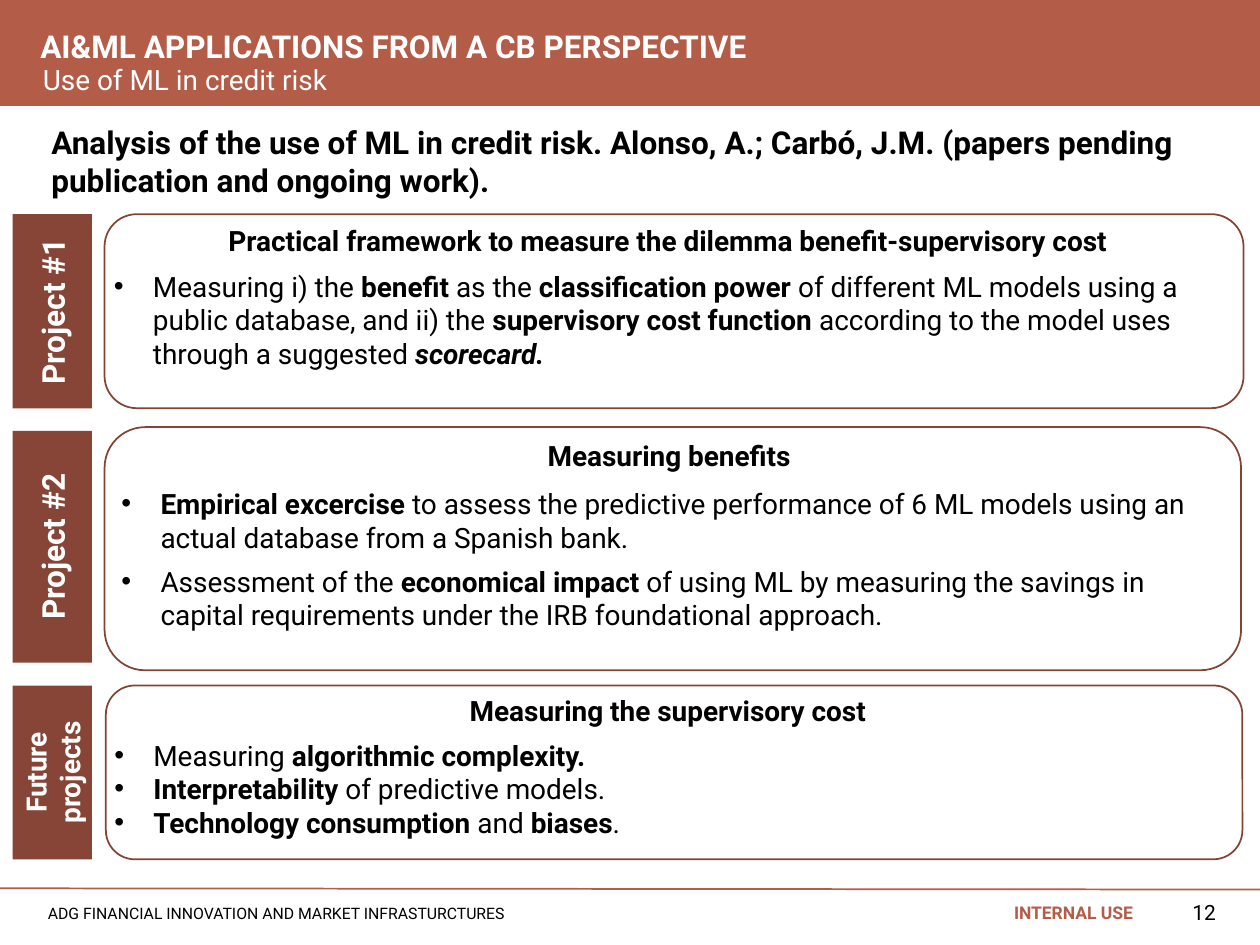
from pptx import Presentation
from pptx.dml.color import RGBColor
from pptx.enum.shapes import MSO_CONNECTOR as Conn, MSO_SHAPE as Shape
from pptx.enum.text import MSO_ANCHOR as Anchor, MSO_AUTO_SIZE as Fit, PP_ALIGN as Align
from pptx.oxml.ns import qn
from pptx.util import Inches, Pt
from lxml import etree

FONT = "Roboto"
BRICK, RUST, EDGE = "B35C48", "864536", "844435"
WHITE, BLACK = "FFFFFF", "000000"


def color(code):
    return RGBColor.from_string(code)


def write(frame, text, size=16, tint=BLACK, bold=False, align=Align.LEFT,
          before=0, line=None, bullet=False, first=True):
    """Add a paragraph; *stars* mark bold, *~tilde* marks bold italic."""
    para = frame.paragraphs[0] if first else frame.add_paragraph()
    props = para._p.get_or_add_pPr()
    hang = Inches(0.31) if bullet else 0
    props.set("marL", str(hang))
    props.set("indent", str(-hang))
    if bullet:
        etree.SubElement(props, qn("a:buFont")).set("typeface", "Arial")
        etree.SubElement(props, qn("a:buChar")).set("char", "•")
    else:
        etree.SubElement(props, qn("a:buNone"))
    para.alignment = align
    para.space_before = Pt(before)
    if line:
        para.line_spacing = line
    for i, part in enumerate(text.split("*")):
        if not part:
            continue
        run = para.add_run()
        run.text = part.lstrip("~")
        font = run.font
        font.name, font.size = FONT, Pt(size)
        font.color.rgb = color(tint)
        font.bold = bold or i % 2 == 1
        font.italic = part.startswith("~")


def setup(frame, pads=(0.1, 0.05, 0.1, 0.05), anchor=Anchor.TOP):
    frame.word_wrap = True
    frame.auto_size = Fit.NONE
    frame.vertical_anchor = anchor
    (frame.margin_left, frame.margin_top,
     frame.margin_right, frame.margin_bottom) = map(Inches, pads)
    return frame


def block(slide, kind, box, fill=None, edge=None):
    shape = slide.shapes.add_shape(kind, *map(Inches, box))
    shape.shadow.inherit = False
    if fill:
        shape.fill.solid()
        shape.fill.fore_color.rgb = color(fill)
    else:
        shape.fill.background()
    if edge:
        shape.line.color.rgb = color(edge)
        shape.line.width = Pt(1)
    else:
        shape.line.fill.background()
    return shape


def label(slide, box, text, pads=(0.1, 0.05, 0.1, 0.05), **style):
    area = slide.shapes.add_textbox(*map(Inches, box))
    write(setup(area.text_frame, pads), text, **style)


def fill_in(slide, holder, box, text, **style):
    """Place a template placeholder in front and write its text."""
    slide.shapes._spTree.append(holder._element)
    holder.left, holder.top, holder.width, holder.height = map(Inches, box)
    write(setup(holder.text_frame), text, line=0.9, **style)


def header(slide, box):
    x, y, w, h = box
    block(slide, Shape.RECTANGLE, box, fill=BRICK)
    fill_in(slide, slide.shapes.title, (x + 0.22, y + 0.2, 8.01, 0.33),
            "AI&ML APPLICATIONS FROM A CB PERSPECTIVE",
            size=18, tint=WHITE, bold=True)
    fill_in(slide, slide.placeholders[1], (x + 0.24, y + 0.48, 6.97, 0.31),
            "Use of ML in credit risk", tint=WHITE)


def footer(slide, box):
    x, y, w, h = box
    rule = slide.shapes.add_connector(
        Conn.STRAIGHT, *map(Inches, (x, y, x + w, y + 0.01)))
    rule.line.color.rgb = color(BRICK)
    rule.line.width = Pt(1)
    etree.SubElement(rule._element.spPr, qn("a:effectLst"))
    fill_in(slide, slide.placeholders[2], (x + 0.28, y + 0.09, 4.96, 0.28),
            "ADG FINANCIAL INNOVATION AND MARKET INFRASTURCTURES", size=9)
    label(slide, (x + 7.36, y + 0.06, 1.73, 0.32), "INTERNAL USE",
          size=10, tint=BRICK, bold=True, align=Align.RIGHT)
    label(slide, (x + 9.13, y + 0.04, 0.52, 0.33), "12",
          pads=(0.1, 0.05, 0, 0.05), size=12, align=Align.RIGHT)


def tab(slide, box, text, size):
    """Draw a tab that reads upward and fills the upright box."""
    x, y, w, h = box
    shape = block(slide, Shape.RECTANGLE,
                  (x + (w - h) / 2, y + (h - w) / 2, h, w), fill=RUST)
    shape.rotation = 270
    write(setup(shape.text_frame, anchor=Anchor.MIDDLE), text, size=size,
          tint=WHITE, bold=True, align=Align.CENTER)


def card(slide, box, head, items, pad=0):
    """Draw a rounded panel; each item is (space before, text)."""
    shape = block(slide, Shape.ROUNDED_RECTANGLE, box, edge=EDGE)
    frame = setup(shape.text_frame, (pad, 0, 0.1, 0.05))
    write(frame, head, bold=True, align=Align.CENTER)
    for gap, text in items:
        write(frame, text, before=gap, bullet=True, first=False)


def main():
    deck = Presentation()
    deck.slide_width, deck.slide_height = Inches(10), Inches(7.5)
    slide = deck.slides.add_slide(deck.slide_layouts[3])
    for holder in list(slide.placeholders):
        if holder.placeholder_format.idx > 2:
            holder._element.getparent().remove(holder._element)

    header(slide, (0, 0, 10.01, 0.84))
    footer(slide, (0, 7.05, 10.01, 0.45))
    label(slide, (0.31, 0.93, 9.34, 1.01),
          "Analysis of the use of ML in credit risk. Alonso, A.; Carbó, J.M. "
          "(papers pending publication and ongoing work).",
          size=18, bold=True)

    # Project panels
    card(slide, (0.83, 1.7, 9.04, 1.54),
         "Practical framework to measure the dilemma benefit-supervisory cost",
         [(7, "Measuring i) the *benefit* as the *classification power *of "
              "different ML models using a public database, and ii) the "
              "*supervisory cost function *according to the model uses "
              "through a suggested *~scorecard.*")])
    card(slide, (0.83, 3.39, 9.02, 1.93), "Measuring benefits",
         [(8, "*Empirical excercise *to assess the predictive performance of "
              "6 ML models using an actual database from a Spanish bank."),
          (6, "Assessment of the *economical impact *of using ML by measuring "
              "the savings in capital requirements under the IRB "
              "foundational approach.")], pad=0.04)
    card(slide, (0.84, 5.44, 9.02, 1.38), "Measuring the supervisory cost",
         [(6, "Measuring *algorithmic complexity.*"),
          (0, "*Interpretability *of predictive models."),
          (0, "*Technology consumption* and *biases*.")])

    # Side tabs
    for top, high, text, size in ((1.7, 1.54, "Project #1", 18),
                                  (3.42, 1.84, "Project #2", 18),
                                  (5.44, 1.38, "Future projects", 16)):
        tab(slide, (0.1, top, 0.63, high), text, size)

    deck.save("out.pptx")


if __name__ == "__main__":
    main()
